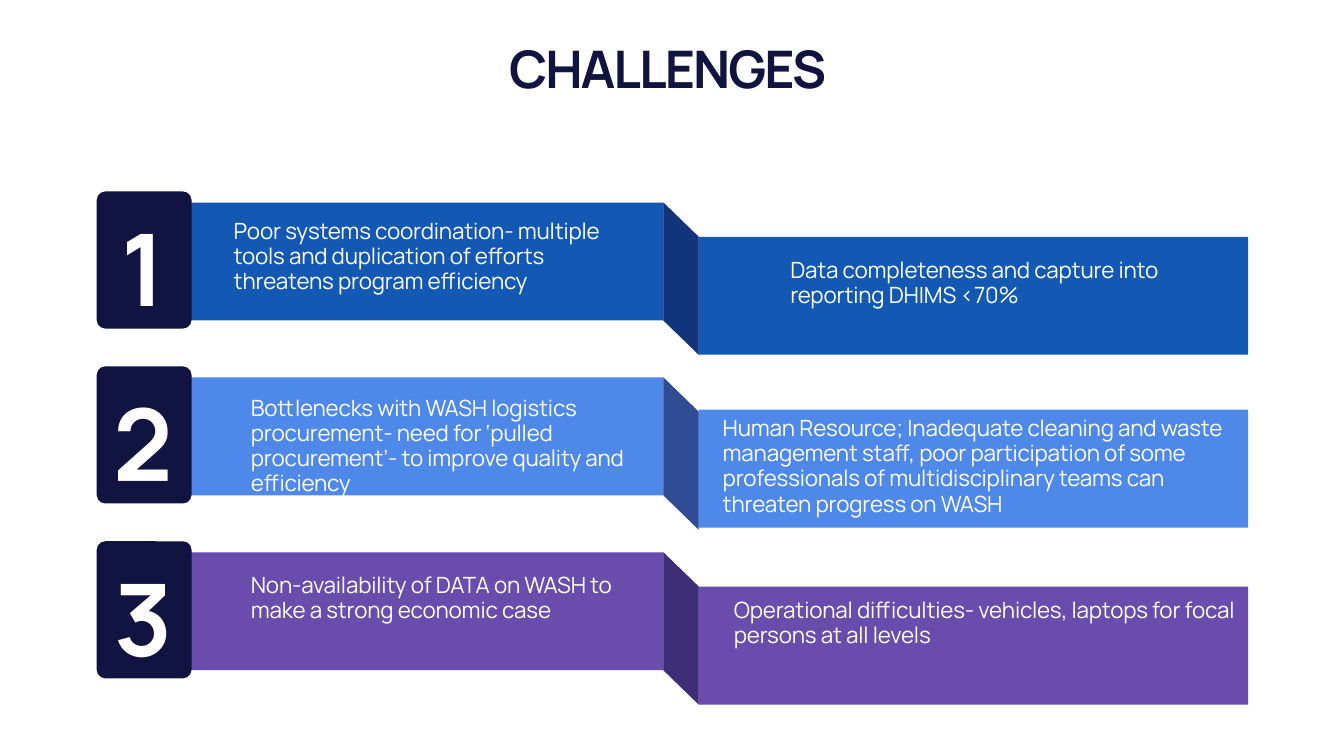
from dataclasses import dataclass

from lxml import etree
from pptx import Presentation
from pptx.dml.color import RGBColor
from pptx.enum.shapes import MSO_SHAPE
from pptx.enum.text import MSO_ANCHOR, MSO_AUTO_SIZE, PP_ALIGN
from pptx.oxml.ns import qn
from pptx.util import Inches, Pt

RECT = MSO_SHAPE.RECTANGLE
ROUNDED = MSO_SHAPE.ROUNDED_RECTANGLE
BOTTOM = MSO_ANCHOR.BOTTOM
CENTER = PP_ALIGN.CENTER
FIT_SHAPE = MSO_AUTO_SIZE.SHAPE_TO_FIT_TEXT


@dataclass(frozen=True)
class Theme:
    """Colours, font and type sizes of the slide."""
    font: str = "Manrope"
    navy: str = "111340"
    shade: str = "121143"
    white: str = "FFFFFF"
    title: float = 37
    number: float = 71.5
    body: float = 16
    leading: float = 18


@dataclass(frozen=True)
class Challenge:
    """One band: colour, panel drop, and two texts with their boxes inside the band."""
    color: str
    drop: float
    left_text: str
    left_box: tuple
    right_text: str
    right_box: tuple


THEME = Theme()
ROW_LEFT, ROW_TOP, ROW_W, ROW_H, ROW_PITCH = 0.96, 1.9, 11.42, 1.61, 1.735
CHALLENGES = [
    Challenge("1359B4", 0.34,
              "Poor systems coordination- multiple tools and duplication of efforts "
              "threatens program efficiency", (1.26, 0.22, 4.16, 1.11),
              "Data completeness and capture into reporting DHIMS <70%",
              (6.78, 0.61, 4.24, 0.61)),
    Challenge("4E88E9", 0.32,
              "Bottlenecks with WASH logistics procurement- need for ‘pulled "
              "procurement’- to improve quality and efficiency", (1.43, 0.24, 4.19, 1.11),
              "Human Resource; Inadequate cleaning and waste management staff, poor "
              "participation of some professionals of multidisciplinary teams can "
              "threaten progress on WASH", (6.11, 0.44, 5.23, 1.11)),
    Challenge("694CAC", 0.34,
              "Non-availability of DATA on WASH to make a strong economic case",
              (1.43, 0.26, 4.3, 0.61),
              "Operational difficulties- vehicles, laptops for focal persons at all levels",
              (6.22, 0.51, 5.32, 0.61)),
]


def paint(shape, color, alpha=None):
    """Give a shape a flat fill, optionally see-through, with no line or shadow."""
    shape.shadow.inherit = False
    shape.line.fill.background()
    shape.fill.solid()
    shape.fill.fore_color.rgb = RGBColor.from_string(color)
    if alpha is not None:
        clr = shape.fill._xPr.find(qn("a:solidFill"))[0]
        etree.SubElement(clr, qn("a:alpha")).set("val", str(alpha * 1000))


def add_block(s, kind, box, color):
    """Add a filled preset shape."""
    shape = s.shapes.add_shape(kind, *map(Inches, box))
    paint(shape, color)
    return shape


def add_fold(s, left, top, width, height, drop, color):
    """Add the slanted fold joining two panels, with a dark veil over it."""
    corners = [(left, top), (left + width, top + drop),
               (left + width, top + drop + height), (left, top + height)]
    points = [(Inches(x), Inches(y)) for x, y in corners]
    for fill, alpha in ((color, None), (THEME.shade, 50)):
        builder = s.shapes.build_freeform(*points[0])
        builder.add_line_segments(points[1:], close=True)
        paint(builder.convert_to_shape(), fill, alpha)


def add_text(s, box, text, size, color, spacing):
    """Add a wrapped text box and return its frame."""
    tf = s.shapes.add_textbox(*map(Inches, box)).text_frame
    tf.word_wrap = True
    tf.auto_size = FIT_SHAPE
    tf.text = text
    r = tf.paragraphs[0].runs[0]
    r.font.name = THEME.font
    r.font.size = Pt(size)
    r.font.color.rgb = RGBColor.from_string(color)
    r._r.get_or_add_rPr().set("spc", str(round(spacing * 100)))
    return tf


def add_heading(s, box, text, size, color):
    """Add bold centred text that fills its box without margins."""
    tf = add_text(s, box, text, size, color, -1.4)
    tf.margin_left = tf.margin_right = tf.margin_top = tf.margin_bottom = 0
    tf.vertical_anchor = BOTTOM
    p = tf.paragraphs[0]
    p.alignment = CENTER
    p.runs[0].font.bold = True


def add_body(s, box, text):
    """Add a paragraph of white panel text."""
    tf = add_text(s, box, text, THEME.body, THEME.white, -0.1)
    tf.paragraphs[0].line_spacing = Pt(THEME.leading)


def add_challenge(s, box, number, challenge):
    """Draw one numbered band: two panels, the fold, the badge and the texts."""
    left, top, width, height = box
    panel_w, panel_h, fold_w, fold_drop = 5.45, 1.17, 0.35, 0.34
    panel_top = top + 0.11
    fold_left = left + width - panel_w - fold_w
    add_block(s, RECT, (fold_left - panel_w, panel_top, panel_w, panel_h), challenge.color)
    add_block(s, RECT, (fold_left + fold_w, panel_top + challenge.drop, panel_w, panel_h),
              challenge.color)
    add_fold(s, fold_left, panel_top, fold_w, panel_h, fold_drop, challenge.color)
    badge = add_block(s, ROUNDED, (left, top, 0.94, height - 0.25), THEME.navy)
    badge.adjustments[0] = 0.09
    for text, (dx, dy, w, h) in ((challenge.left_text, challenge.left_box),
                                 (challenge.right_text, challenge.right_box)):
        add_body(s, (left + dx, top + dy, w, h), text)
    add_heading(s, (left + 0.07, top + 0.04, 0.78, 1.3), str(number), THEME.number, THEME.white)


def main():
    """Build the slide and save it."""
    prs = Presentation()
    prs.slide_width, prs.slide_height = Inches(13.33), Inches(7.5)
    s = prs.slides.add_slide(prs.slide_layouts[6])
    add_heading(s, (0.83, 0.26, 11.67, 0.72), "CHALLENGES ", THEME.title, THEME.navy)
    for i, challenge in enumerate(CHALLENGES):
        add_challenge(s, (ROW_LEFT, ROW_TOP + i * ROW_PITCH, ROW_W, ROW_H), i + 1, challenge)
    prs.save("out.pptx")


if __name__ == "__main__":
    main()
